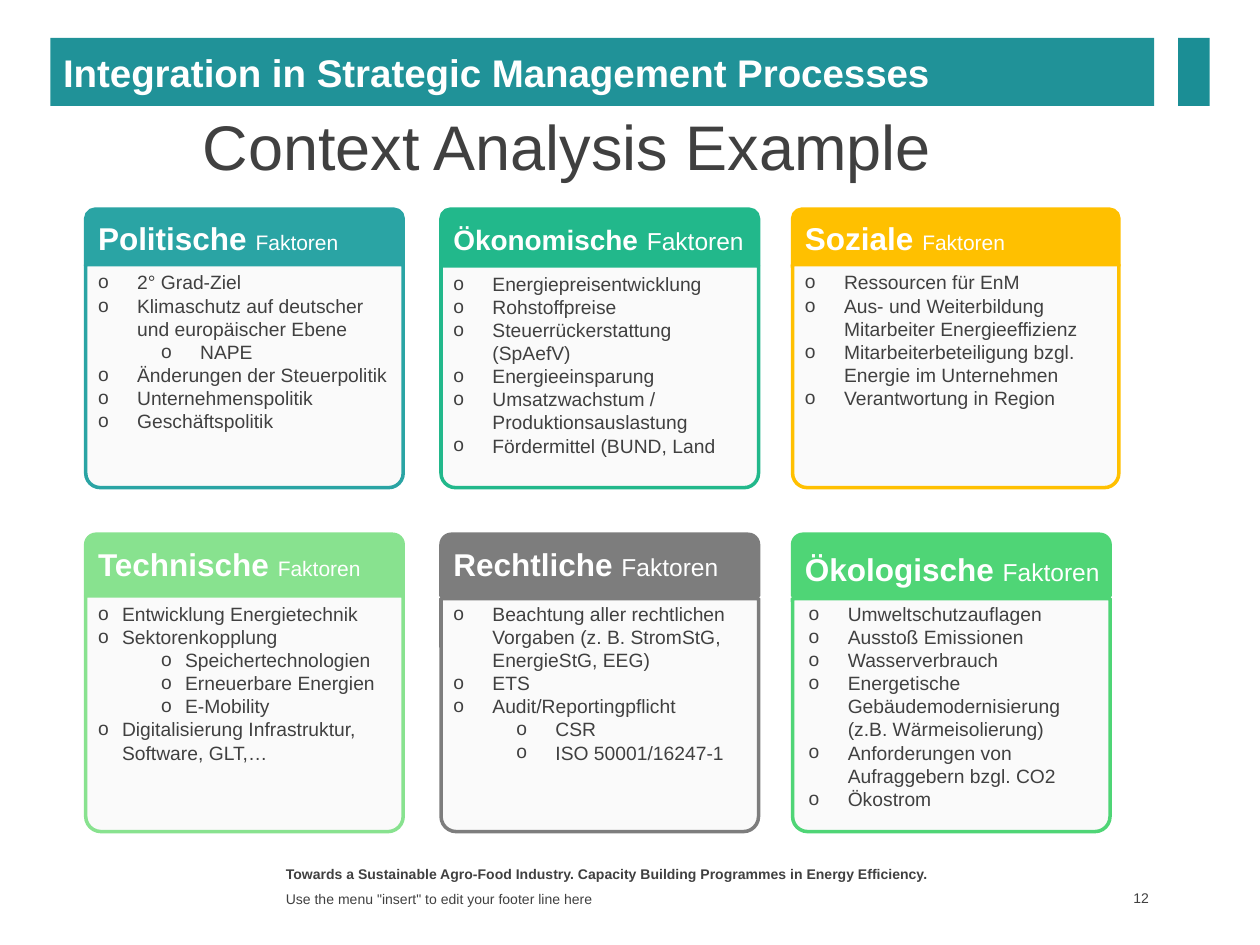
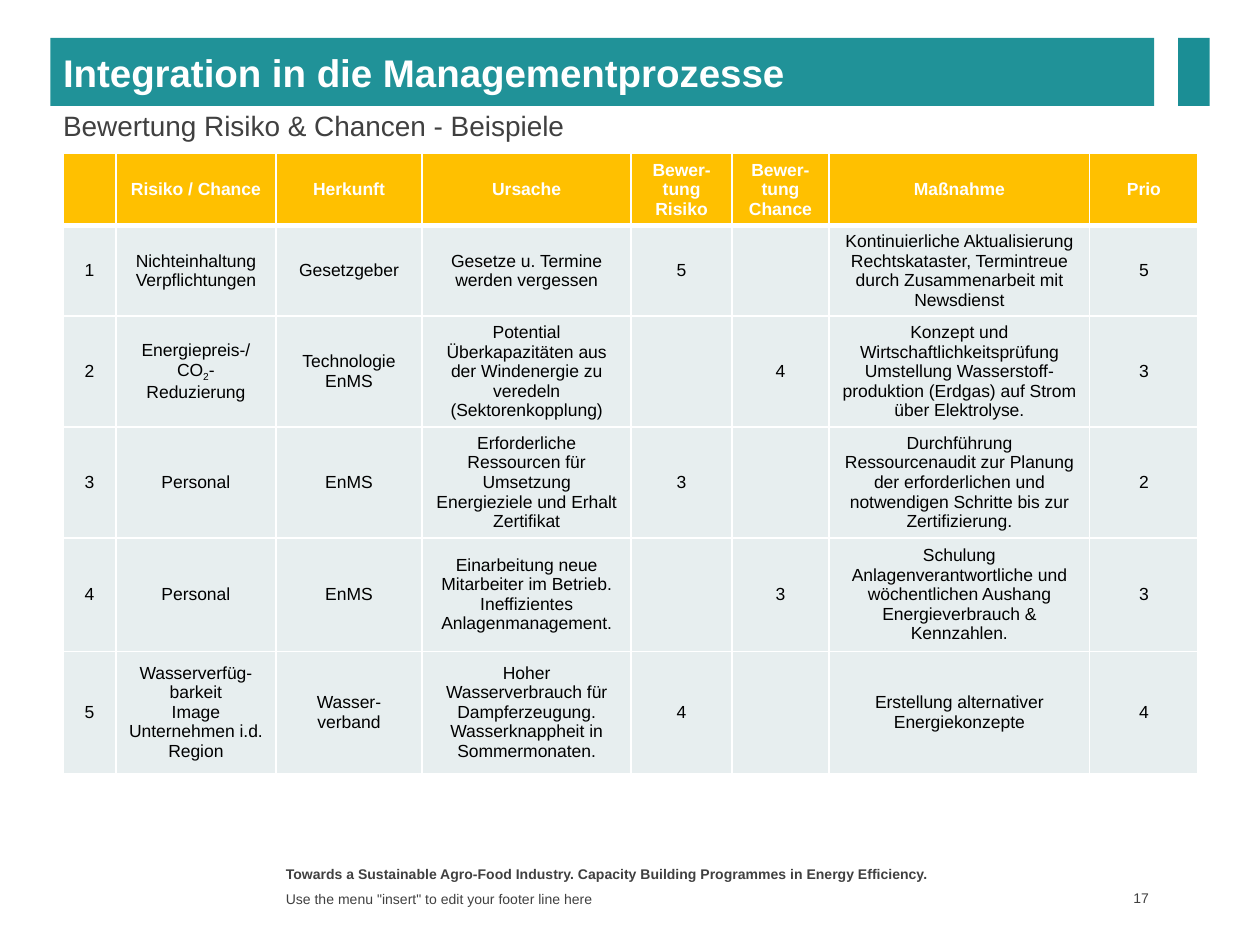
from dataclasses import dataclass

from lxml import etree
from pptx import Presentation
from pptx.dml.color import RGBColor
from pptx.enum import shapes, text
from pptx.oxml import ns
from pptx.util import Inches, Pt

FACE = "Arial"
INK, WHITE, BLACK = "404040", "FFFFFF", "000000"
BAND, TAB, PAPER = "209298", "1B8E95", "FAFAFA"
GOLD, MIST = "FFC000", "E7EEEF"
LEFT, MID, RIGHT = 0.68, 3.5, 6.29
CENTER = text.PP_ALIGN.CENTER
MIDDLE = text.MSO_ANCHOR.MIDDLE


@dataclass
class Box:
    x: float
    y: float
    w: float
    h: float

    def spans(self) -> list:
        return [Inches(n) for n in (self.x, self.y, self.w, self.h)]


@dataclass
class Row:
    top: float
    head: float
    end: float


@dataclass
class Card:
    name: str
    hue: str
    x: float
    row: Row
    cut: float
    label: float
    items: list
    w: float = 2.52
    big: int = 18
    small: int = 12
    hang: float = 0.31
    shift: float = 0


UPPER = Row(1.66, 0.45, 3.87)
LOWER = Row(4.24, 0.49, 6.6)

CARDS = [
    Card("Politische", "2AA4A4", LEFT, UPPER, 2.1, 1.69, [
        "2° Grad-Ziel", "Klimaschutz auf deutscher und europäischer Ebene",
        ">NAPE", "Änderungen der Steuerpolitik",
        "Unternehmenspolitik", "Geschäftspolitik"]),
    Card("Ökonomische", "22B88B", MID, UPPER, 2.11, 1.69, [
        "Energiepreisentwicklung", "Rohstoffpreise",
        "Steuerrückerstattung (SpAefV)", "Energieeinsparung",
        "Umsatzwachstum / Produktionsauslastung",
        "Fördermittel (BUND, Land"], big=16, small=14),
    Card("Soziale", GOLD, RIGHT, UPPER, 2.1, 1.69, [
        "Ressourcen für EnM",
        "Aus- und Weiterbildung Mitarbeiter Energieeffizienz",
        "Mitarbeiterbeteiligung bzgl. Energie im Unternehmen",
        "Verantwortung in Region"], w=2.59),
    Card("Technische", "88E28F", LEFT, LOWER, 4.73, 4.28, [
        "Entwicklung Energietechnik", "Sektorenkopplung",
        ">Speichertechnologien", ">Erneuerbare Energien", ">E-Mobility",
        "Digitalisierung Infrastruktur, Software, GLT,…"], hang=0.19),
    Card("Rechtliche", "7D7D7D", MID, LOWER, 4.75, 4.28, [
        "Beachtung aller rechtlichen Vorgaben "
        "(z. B. StromStG, EnergieStG, EEG)",
        "ETS", "Audit/Reportingpflicht", ">CSR", ">ISO 50001/16247-1"],
        small=14),
    Card("Ökologische", "4FD576", RIGHT, LOWER, 4.75, 4.32, [
        "Umweltschutzauflagen", "Ausstoß Emissionen", "Wasserverbrauch",
        "Energetische Gebäudemodernisierung (z.B. Wärmeisolierung)",
        "Anforderungen von Aufraggebern bzgl. CO2", "Ökostrom"],
        small=14, shift=0.03),
]

COLS = [0.42, 1.27, 1.16, 1.66, 0.8, 0.77, 2.07, 0.86]
ROWS = [0.57, 0.72, 0.88, 0.88, 0.9, 0.97]
RISKS = [
    ["", "Risiko / Chance", "Herkunft", "Ursache", "Bewer-tung Risiko",
     "Bewer-tung Chance", "Maßnahme", "Prio"],
    ["1", "Nichteinhaltung Verpflichtungen", "Gesetzgeber",
     "Gesetze u. Termine werden vergessen", "5", "",
     "Kontinuierliche Aktualisierung Rechtskataster, Termintreue "
     "durch Zusammenarbeit mit Newsdienst", "5"],
    ["2", "Energiepreis-/ CO₂-Reduzierung", "Technologie\nEnMS",
     "Potential Überkapazitäten aus der Windenergie zu veredeln "
     "(Sektorenkopplung)", "", "4",
     "Konzept und Wirtschaftlichkeitsprüfung Umstellung "
     "Wasserstoff-produktion (Erdgas) auf Strom über Elektrolyse.", "3"],
    ["3", "Personal", "EnMS",
     "Erforderliche Ressourcen für Umsetzung Energieziele und Erhalt "
     "Zertifikat", "3", "",
     "Durchführung Ressourcenaudit zur Planung der erforderlichen und "
     "notwendigen Schritte bis zur Zertifizierung.", "2"],
    ["4", "Personal", "EnMS",
     "Einarbeitung neue Mitarbeiter im Betrieb. Ineffizientes "
     "Anlagenmanagement.", "", "3",
     "Schulung Anlagenverantwortliche und wöchentlichen Aushang "
     "Energieverbrauch & Kennzahlen.", "3"],
    ["5", "Wasserverfüg-barkeit\nImage Unternehmen i.d. Region",
     "Wasser-verband",
     "Hoher Wasserverbrauch für Dampferzeugung. Wasserknappheit in "
     "Sommermonaten.", "4", "",
     "Erstellung alternativer Energiekonzepte", "4"],
]


def rgb(code: str) -> RGBColor:
    return RGBColor.from_string(code)


def paint(obj, code: str) -> None:
    obj.fill.solid()
    obj.fill.fore_color.rgb = rgb(code)


def style(font, size: float, code: str = INK, bold: bool = False) -> None:
    font.name = FACE
    font.size = Pt(size)
    font.bold = bold
    font.color.rgb = rgb(code)


def place(shape, box: Box) -> None:
    shape.left, shape.top, shape.width, shape.height = box.spans()


def frame(slide, box: Box, anchor=text.MSO_ANCHOR.TOP):
    body = slide.shapes.add_textbox(*box.spans()).text_frame
    body.word_wrap = True
    body.vertical_anchor = anchor
    return body


def note(slide, box: Box, words: str, bold: bool = False, anchor=MIDDLE):
    body = frame(slide, box, anchor)
    para = body.paragraphs[0]
    para.text = words
    style(para.font, 8, bold=bold)
    return body


def block(slide, kind, box: Box, fill: str, line: str = ""):
    shape = slide.shapes.add_shape(kind, *box.spans())
    shape.shadow.inherit = False
    paint(shape, fill)
    if line:
        shape.line.color.rgb = rgb(line)
        shape.line.width = Pt(2)
    else:
        shape.line.fill.background()
    return shape


def bullet(para, mark: str, left: float = 0, hang: float = 0) -> None:
    props = para._p.get_or_add_pPr()
    props.set("marL", str(Inches(left)))
    props.set("indent", str(-Inches(hang)))
    if mark:
        etree.SubElement(props, ns.qn("a:buFont")).set("typeface", FACE)
        etree.SubElement(props, ns.qn("a:buChar")).set("char", mark)
    else:
        etree.SubElement(props, ns.qn("a:buNone"))


def fit(shape, box: Box, words: str, size: float, code: str, bold: bool,
        align, anchor) -> None:
    place(shape, box)
    body = shape.text_frame
    body.auto_size = text.MSO_AUTO_SIZE.NONE
    body.word_wrap = True
    body.vertical_anchor = anchor
    para = body.paragraphs[0]
    para.text = words
    para.alignment = align
    para.space_before = Pt(0)
    bullet(para, "")
    style(para.font, size, code, bold)


def base(deck, title: str, sub: str, box: Box, size: float, align, anchor,
         page: int):
    slide = deck.slides.add_slide(deck.slide_layouts[1])
    head, body = slide.placeholders
    fit(head, Box(0.4, 0.3, 8.76, 0.54), title, 22, WHITE, True,
        text.PP_ALIGN.LEFT, MIDDLE)
    paint(head, BAND)
    fit(body, box, sub, size, INK, False, align, anchor)
    block(slide, shapes.MSO_SHAPE.RECTANGLE, Box(9.35, 0.3, 0.25, 0.54), TAB)
    note(slide, Box(2.17, 6.82, 5.5, 0.21),
         "Towards a Sustainable Agro-Food Industry. "
         "Capacity Building Programmes in Energy Efficiency.",
         True, text.MSO_ANCHOR.TOP)
    note(slide, Box(2.17, 7.04, 5.5, 0.19),
         'Use the menu "insert" to edit your footer line here')
    num = note(slide, Box(8.6, 7.03, 0.56, 0.2), str(page))
    num.margin_right = Inches(0.04)
    num.paragraphs[0].alignment = text.PP_ALIGN.RIGHT
    return slide


def draw(slide, card: Card) -> None:
    kind = shapes.MSO_SHAPE.ROUND_2_SAME_RECTANGLE
    row = card.row
    block(slide, kind, Box(card.x, row.top, card.w, row.head),
          card.hue, card.hue)
    panel = block(slide, kind,
                  Box(card.x, card.cut, card.w, row.end - card.cut),
                  PAPER, card.hue)
    panel.rotation = 180
    panel.adjustments[0] = 0.065

    para = frame(slide, Box(card.x, card.label, 2.59, 0.4)).paragraphs[0]
    for words, size, bold in ((card.name, card.big, True), (" ", 18, True),
                              ("Faktoren", card.small, False)):
        run = para.add_run()
        run.text = words
        style(run.font, size, WHITE, bold)

    top = 4.73 if row is LOWER else card.cut
    body = frame(slide, Box(card.x + card.shift, top, 2.52, row.end - top))
    for i, item in enumerate(card.items):
        para = body.paragraphs[0] if i == 0 else body.add_paragraph()
        para.text = item.lstrip(">")
        para.level = int(item.startswith(">"))
        bullet(para, "o", card.hang + para.level / 2, card.hang)
        style(para.font, 11)


def edge(cell, side: str, width: float) -> None:
    props = cell._tc.get_or_add_tcPr()
    line = etree.SubElement(props, ns.qn(f"a:ln{side}"), w=str(Pt(width)))
    fill = etree.SubElement(line, ns.qn("a:solidFill"))
    etree.SubElement(fill, ns.qn("a:srgbClr"), val=WHITE)


def write(cell, words: str, row: int) -> None:
    for side in "LRTB":
        thick = (row, side) in ((0, "B"), (1, "T"))
        edge(cell, side, 3 if thick else 1)
    paint(cell, MIST if row else GOLD)
    cell.vertical_anchor = MIDDLE
    cell.margin_top = cell.margin_bottom = Inches(0.02)
    para = cell.text_frame.paragraphs[0]
    para.alignment = CENTER
    style(para.font, 10, BLACK if row else WHITE, row == 0)
    start, sub, rest = words.partition("₂")
    para.text = start
    if sub:
        low = para.add_run()
        low.text = "2"
        low._r.get_or_add_rPr().set("baseline", "-25000")
        para.add_run().text = rest


def grid(slide) -> None:
    box = Box(0.5, 1.22, sum(COLS), sum(ROWS))
    table = slide.shapes.add_table(len(ROWS), len(COLS), *box.spans()).table
    table.horz_banding = False
    for col, width in zip(table.columns, COLS):
        col.width = Inches(width)
    for r, (row, height) in enumerate(zip(table.rows, ROWS)):
        row.height = Inches(height)
        for cell, words in zip(row.cells, RISKS[r]):
            write(cell, words, r)


def main() -> None:
    deck = Presentation()
    deck.slide_width, deck.slide_height = Inches(10), Inches(7.5)
    slide = base(deck, "Integration in Strategic Management Processes",
                 "Context Analysis Example", Box(0.12, 0.8, 8.76, 0.71), 36,
                 CENTER, text.MSO_ANCHOR.TOP, 12)
    for card in CARDS:
        draw(slide, card)
    slide = base(deck, "Integration in die Managementprozesse",
                 "Bewertung Risiko & Chancen - Beispiele",
                 Box(0.4, 0.84, 9.19, 0.31), 16,
                 text.PP_ALIGN.LEFT, MIDDLE, 17)
    grid(slide)
    deck.save("out.pptx")


if __name__ == "__main__":
    main()
